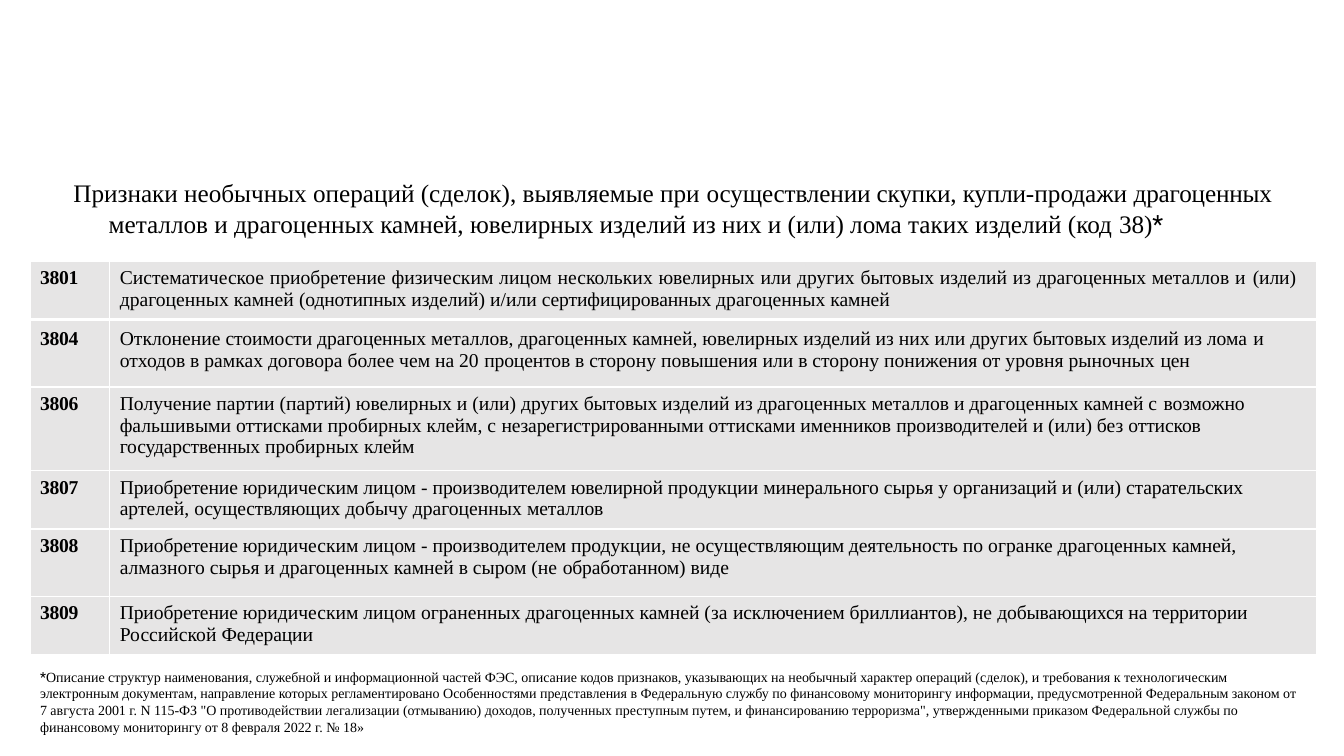
from dataclasses import dataclass

from lxml import etree
from pptx import Presentation
from pptx.dml.color import RGBColor
from pptx.enum.text import MSO_ANCHOR, MSO_AUTO_SIZE, PP_ALIGN
from pptx.oxml.ns import qn
from pptx.util import Cm, Pt

LEFT, JUSTIFY = PP_ALIGN.LEFT, PP_ALIGN.JUSTIFY
TOP = MSO_ANCHOR.TOP
FIT_SHAPE = MSO_AUTO_SIZE.SHAPE_TO_FIT_TEXT
TITLE_ONLY = 5
SERIF, SANS = "Times New Roman", "Roboto"
BLACK, WHITE, GREY = "000000", "FFFFFF", "E6E5E5"
THIN, THICK = 1, 3


@dataclass
class Sign:
    code: str
    text: str  # every second part between bars is set slightly tighter
    height: float
    top_margin: float = 0.15
    align: PP_ALIGN = LEFT


TITLE = (
    "Признаки необычных операций (сделок), выявляемые при |осуществлении скупки, купли-|продажи "
    "|драгоценных |металлов и драгоценных камней, ювелирных изделий из них и (или) лома таких "
    "изделий (код |38)"
)
SIGNS = [
    Sign("3801", "Систематическое приобретение физическим лицом нескольких ювелирных или других "
         "бытовых изделий из драгоценных металлов и |(или) |драгоценных камней |(однотипных "
         "|изделий) и/или |сертифицированных |драгоценных |камней", 1.47, align=JUSTIFY),
    Sign("3804", "Отклонение |стоимости |драгоценных металлов, драгоценных камней, ювелирных "
         "изделий из них или других бытовых изделий из лома |и |отходов в рамках договора более "
         "чем на 20 |процентов |в сторону повышения или в сторону понижения от уровня рыночных "
         "|цен", 1.7, top_margin=0.22),
    Sign("3806", "Получение партии (партий) ювелирных и (или) других бытовых изделий из "
         "драгоценных металлов и драгоценных камней с |возможно |фальшивыми оттисками пробирных "
         "клейм, с |незарегистрированными |оттисками именников |производителей |и (или) без "
         "|оттисков государственных |пробирных |клейм", 2.11),
    Sign("3807", "|Приобретение |юридическим лицом - |производителем ювелирной |продукции "
         "|минерального |сырья у |организаций |и (или) |старательских |артелей, "
         "|осуществляющих |добычу драгоценных |металлов", 1.47),
    Sign("3808", "|Приобретение |юридическим лицом - |производителем |продукции, не "
         "|осуществляющим деятельность |по огранке драгоценных |камней, |алмазного сырья и "
         "драгоценных камней в сыром (не |обработанном) |виде", 1.7),
    Sign("3809", "|Приобретение |юридическим лицом ограненных драгоценных камней (за "
         "|исключением |бриллиантов), не |добывающихся |на |территории |Российской "
         "|Федерации", 1.47),
]
FOOTNOTE = (
    "Описание структур наименования, служебной и информационной частей ФЭС, описание кодов "
    "признаков, указывающих на необычный характер операций (сделок), и требования к "
    "технологическим электронным документам, направление которых регламентировано Особенностями "
    "представления в Федеральную службу по финансовому мониторингу информации, предусмотренной "
    "Федеральным законом от 7 августа 2001 г. N 115-ФЗ \"О противодействии легализации "
    "(отмыванию) доходов, полученных преступным путем, и финансированию терроризма\", "
    "утвержденными приказом Федеральной службы по финансовому мониторингу от 8 февраля 2022 г. "
    "№ 18»"
)


def color(value: str) -> RGBColor:
    return RGBColor.from_string(value)


def add_span(para, text: str, size: float, font: str = SERIF, bold: bool = False,
             spacing: float = 0) -> None:
    span = para.add_run()
    span.text = text
    span.font.size, span.font.name, span.font.bold = Pt(size), font, bold
    span.font.color.rgb = color(BLACK)
    if spacing:
        span.font._element.set("spc", str(round(spacing * 100)))


def add_tightened(para, text: str, size: float) -> None:
    """Add bar-separated parts, with every second one tightened."""
    for index, part in enumerate(text.split("|")):
        if part:
            add_span(para, part, size, spacing=-0.1 * (index % 2))


def set_borders(cell, top: float, bottom: float) -> None:
    properties = cell._tc.get_or_add_tcPr()
    for tag, width in (("a:lnL", THIN), ("a:lnR", THIN), ("a:lnT", top), ("a:lnB", bottom)):
        line = etree.SubElement(properties, qn(tag), w=str(Pt(width)))
        fill = etree.SubElement(line, qn("a:solidFill"))
        etree.SubElement(fill, qn("a:srgbClr"), val=WHITE)


def add_title(page) -> None:
    title = page.shapes.title
    title.left, title.top, title.width, title.height = Cm(1.83), Cm(4.45), Cm(30.28), Cm(1.57)
    frame = title.text_frame
    frame.word_wrap, frame.auto_size, frame.vertical_anchor = True, FIT_SHAPE, TOP
    frame.margin_left = frame.margin_right = frame.margin_bottom = 0
    frame.margin_top = Cm(0.03)
    para = frame.paragraphs[0]
    para.alignment = LEFT
    properties = para._p.get_or_add_pPr()
    properties.set("marL", str(Cm(0.91)))
    properties.set("indent", str(Cm(-0.89)))
    add_tightened(para, TITLE, 18)
    add_span(para, "*", 18, SANS)


def add_signs_table(page) -> None:
    height = sum(sign.height for sign in SIGNS)
    table = page.shapes.add_table(len(SIGNS), 2, Cm(0.76), Cm(6.58), Cm(32.41), Cm(height)).table
    table.first_row = table.horz_banding = False
    table.columns[0].width, table.columns[1].width = Cm(2.01), Cm(30.4)
    for index, (row, sign) in enumerate(zip(table.rows, SIGNS)):
        row.height = Cm(sign.height)
        for cell in row.cells:
            cell.margin_left, cell.margin_top = Cm(0.25), Cm(sign.top_margin)
            cell.margin_right = cell.margin_bottom = 0
            set_borders(cell, THICK if index == 1 else THIN, THICK if index == 0 else THIN)
            cell.fill.solid()
            cell.fill.fore_color.rgb = color(GREY)
        code_cell, text_cell = row.cells
        add_span(code_cell.text_frame.paragraphs[0], sign.code, 14, bold=True, spacing=-0.2)
        text_cell.margin_right = Cm(0.51)
        para = text_cell.text_frame.paragraphs[0]
        para.alignment = sign.align
        add_tightened(para, sign.text, 14)


def add_footnote(page) -> None:
    box = page.shapes.add_textbox(Cm(0.76), Cm(16.71), Cm(32.39), Cm(1.96))
    box.text_frame.word_wrap, box.text_frame.auto_size = True, FIT_SHAPE
    para = box.text_frame.paragraphs[0]
    add_span(para, "*", 10, SANS)
    add_span(para, FOOTNOTE, 10)


def main() -> None:
    deck = Presentation()
    deck.slide_width, deck.slide_height = Cm(33.87), Cm(19.05)
    page = deck.slides.add_slide(deck.slide_layouts[TITLE_ONLY])
    add_title(page)
    add_signs_table(page)
    add_footnote(page)
    deck.save("out.pptx")


if __name__ == "__main__":
    main()
